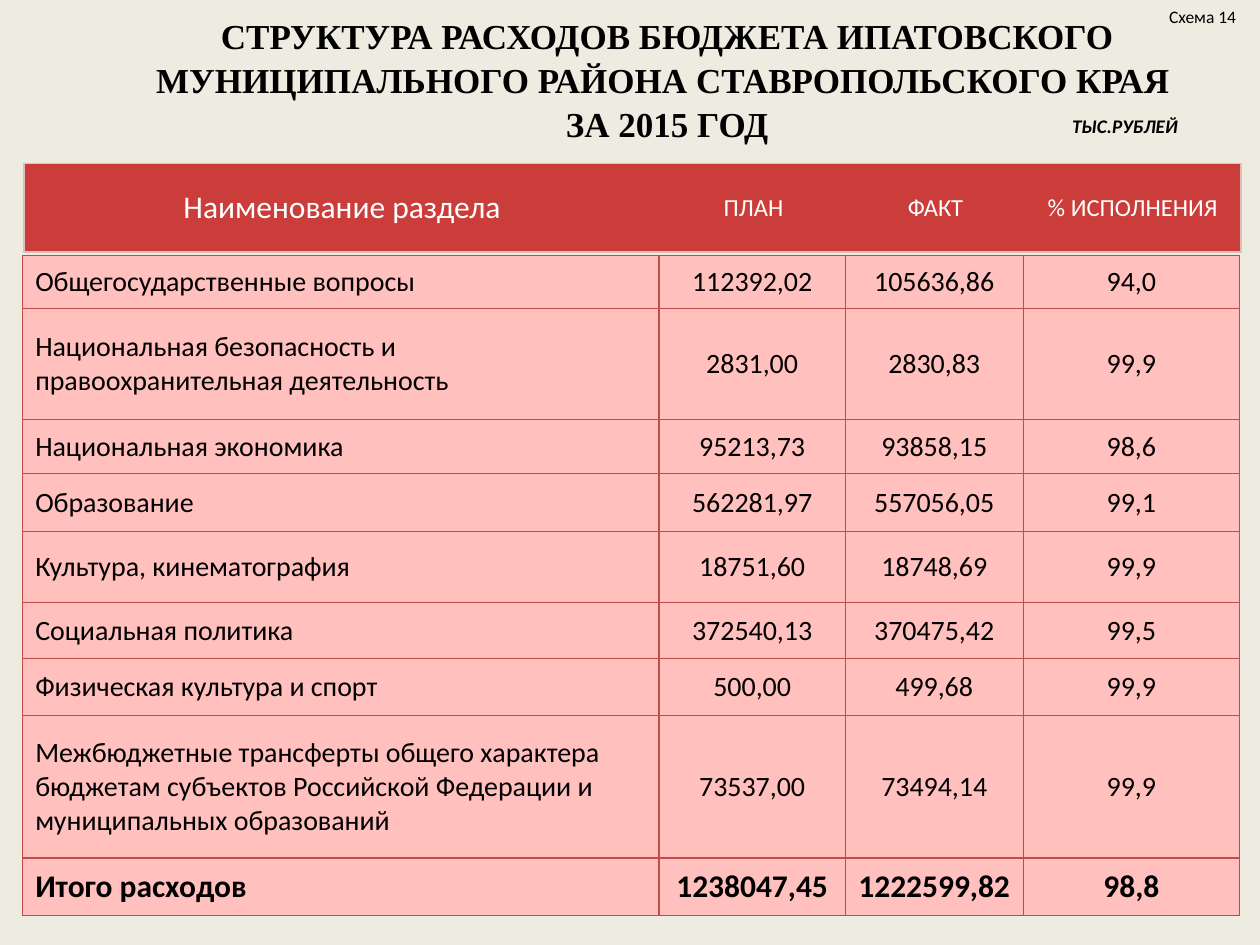
from lxml.etree import SubElement
from pptx import Presentation
from pptx.dml.color import RGBColor
from pptx.enum.text import MSO_ANCHOR as Anchor, MSO_AUTO_SIZE as AutoSize, PP_ALIGN as Align
from pptx.oxml.ns import qn
from pptx.util import Inches, Pt

COLORS = {
    "background": "EEECE1", "text": "000000", "header_text": "FFFFFF",
    "header_fill": "CB3D3A", "header_border": "DEBDBD",
    "body_fill": "FFC0BE", "body_border": "BF4C48",
}
COLUMNS = [5.05, 1.48, 1.41, 1.72]
HEADER = ["Наименование раздела", "ПЛАН", "ФАКТ", "% ИСПОЛНЕНИЯ"]
# Row height, then the texts of the row
EXPENSES = [
    (0.42, "Общегосударственные вопросы", "112392,02", "105636,86", "94,0"),
    (0.88, "Национальная безопасность и правоохранительная деятельность",
     "2831,00", "2830,83", "99,9"),
    (0.43, "Национальная экономика", "95213,73", "93858,15", "98,6"),
    (0.46, "Образование", "562281,97", "557056,05", "99,1"),
    (0.56, "Культура, кинематография", "18751,60", "18748,69", "99,9"),
    (0.45, "Социальная политика", "372540,13", "370475,42", "99,5"),
    (0.45, "Физическая культура и спорт", "500,00", "499,68", "99,9"),
    (1.13, "Межбюджетные трансферты общего характера бюджетам субъектов "
     "Российской Федерации и муниципальных образований",
     "73537,00", "73494,14", "99,9"),
    (0.46, "Итого расходов", "1238047,45", "1222599,82", "98,8"),
]


def rgb(name):
    return RGBColor.from_string(COLORS[name])


def set_font(paragraph, size, color="text", name="Calibri", bold=False, italic=False):
    font = paragraph.font
    font.name, font.size, font.bold, font.italic = name, Pt(size), bold, italic
    font.color.rgb = rgb(color)


def add_label(slide, text, left, top, width, height, size, wrap=False,
              align=Align.LEFT, anchor=Anchor.TOP, **font):
    box = slide.shapes.add_textbox(*map(Inches, (left, top, width, height)))
    frame = box.text_frame
    frame.word_wrap = wrap
    frame.auto_size = AutoSize.NONE if wrap else AutoSize.SHAPE_TO_FIT_TEXT
    frame.vertical_anchor = anchor
    frame.text = text
    paragraph = frame.paragraphs[0]
    paragraph.alignment = align
    set_font(paragraph, size, **font)
    return paragraph


def set_borders(cell, color, sides):
    """Draw the given sides (of L, R, T, B) and clear the others."""
    properties = cell._tc.get_or_add_tcPr()
    for position, side in enumerate("LRTB"):
        line = properties.makeelement(qn(f"a:ln{side}"), {"w": str(Pt(0.75))})
        properties.insert(position, line)
        if side in sides:
            fill = SubElement(line, qn("a:solidFill"))
            SubElement(fill, qn("a:srgbClr"), val=COLORS[color])
        else:
            SubElement(line, qn("a:noFill"))


def fill_cell(cell, text, align, size, fill, color="text", bold=False):
    cell.fill.solid()
    cell.fill.fore_color.rgb = rgb(fill)
    cell.vertical_anchor = Anchor.MIDDLE
    if align == Align.CENTER:
        cell.margin_left = cell.margin_right = Inches(0.07)
    cell.text = text
    paragraph = cell.text_frame.paragraphs[0]
    paragraph.alignment = align
    set_font(paragraph, size, color, bold=bold)


def add_grid(slide, left, top, heights):
    frame = slide.shapes.add_table(
        len(heights), len(COLUMNS), Inches(left), Inches(top),
        Inches(sum(COLUMNS)), Inches(sum(heights)))
    table = frame.table
    table.first_row = table.horz_banding = False
    for column, width in zip(table.columns, COLUMNS):
        column.width = Inches(width)
    for row, height in zip(table.rows, heights):
        row.height = Inches(height)
    return table


def add_header_table(slide):
    table = add_grid(slide, 0.19, 1.3, [0.7])
    last = len(HEADER) - 1
    for index, text in enumerate(HEADER):
        cell = table.cell(0, index)
        fill_cell(cell, text, Align.CENTER, 14 if index else 18,
                  "header_fill", "header_text")
        sides = "TB" + {0: "L", last: "R"}.get(index, "")
        set_borders(cell, "header_border", sides)


def add_expense_table(slide):
    table = add_grid(slide, 0.18, 2.03, [row[0] for row in EXPENSES])
    for row_index, (_, *texts) in enumerate(EXPENSES):
        total = row_index == len(EXPENSES) - 1
        for index, text in enumerate(texts):
            cell = table.cell(row_index, index)
            fill_cell(cell, text, Align.CENTER if index else Align.LEFT,
                      18 if total else 16, "body_fill", bold=total)
            set_borders(cell, "body_border", "LRTB")


def main():
    presentation = Presentation()
    presentation.slide_width, presentation.slide_height = Inches(10), Inches(7.5)
    slide = presentation.slides.add_slide(presentation.slide_layouts[6])
    slide.background.fill.solid()
    slide.background.fill.fore_color.rgb = rgb("background")

    title = add_label(
        slide, "СТРУКТУРА РАСХОДОВ БЮДЖЕТА ИПАТОВСКОГО МУНИЦИПАЛЬНОГО РАЙОНА "
        "СТАВРОПОЛЬСКОГО КРАЯ \vЗА 2015 ГОД", 0.78, 0.14, 9.03, 0.96, 20,
        wrap=True, align=Align.CENTER, anchor=Anchor.MIDDLE,
        name="Times New Roman", bold=True)
    title.line_spacing = 1.05
    add_header_table(slide)
    add_expense_table(slide)
    add_label(slide, "Схема 14", 9.18, 0, 0.75, 0.27, 10)
    add_label(slide, "ТЫС.РУБЛЕЙ", 8.41, 0.86, 1.05, 0.29, 11, bold=True, italic=True)
    presentation.save("out.pptx")


if __name__ == "__main__":
    main()
